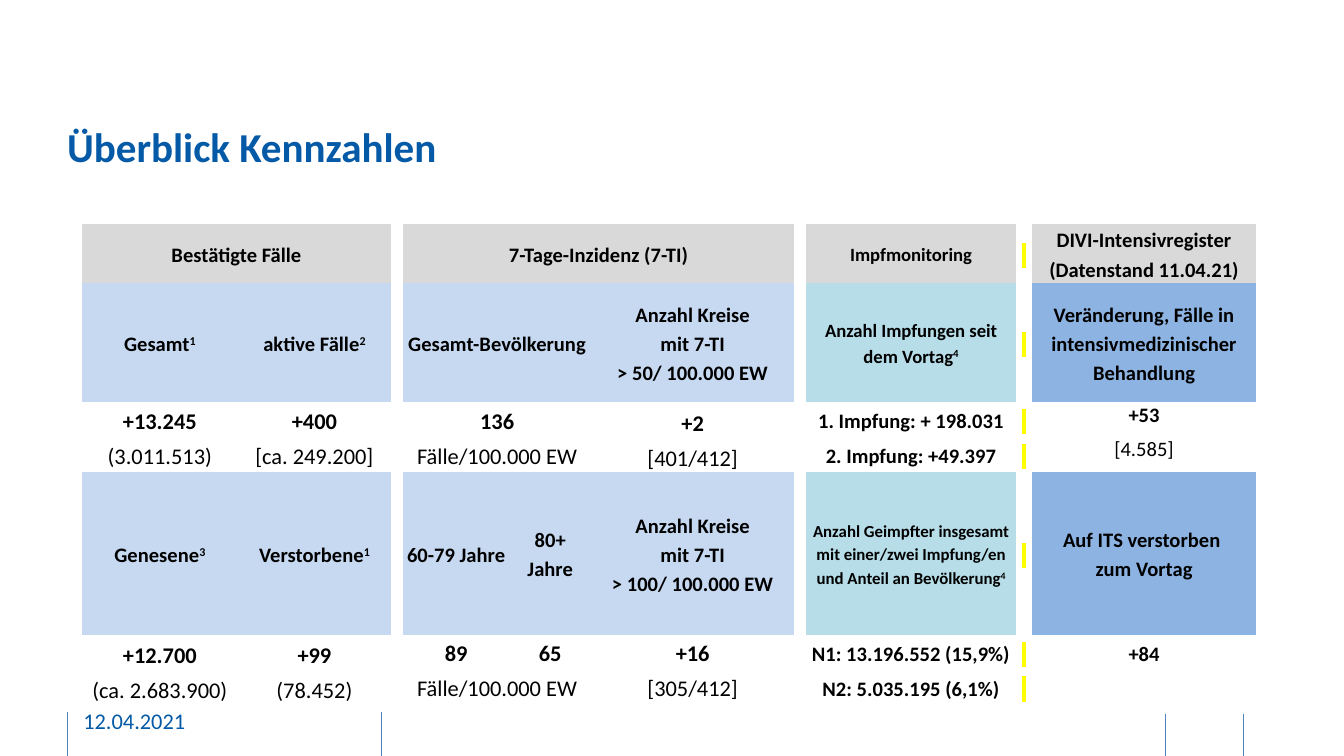
from lxml import etree
from pptx import Presentation, util as u
from pptx.dml.color import RGBColor
from pptx.enum import shapes, text
from pptx.oxml.ns import qn

THEME = {
    "font": "Calibri", "blue": "045AA6", "rule": "4F81BD", "ink": "000000",
    "mark": "FFFF00", "grey": "D9D9D9", "pale": "C6D9F1", "teal": "B6DDE8",
    "deep": "8DB3E2", "title": 22, "value": 12, "head": 11, "small": 10, "tiny": 9,
}
WIDE = 10
TALL = WIDE * 9 / 16
TITLE = "Überblick Kennzahlen"
DATE = "12.04.2021"
RULES = [(0.5, 5.3, 5.63), (2.84, 5.3, 5.64), (8.67, 5.31, 5.65), (9.25, 5.31, 5.65)]
COLS = [1.16, 1.14, 0.09, 0.79, 0.61, 1.51, 0.09, 1.56, 0.12, 1.67]
ROWS = [0.26, 0.89, 0.26, 0.26, 1.21, 0.26, 0.26]
MARK = chr(160)
CELLS = [
    ["Bestätigte Fälle", "", "", "7-Tage-Inzidenz (7-TI)", "", "", "",
     "Impfmonitoring", MARK, "DIVI-Intensivregister\n(Datenstand 11.04.21)"],
    ["Gesamt^1", "aktive Fälle^2", "", "Gesamt-Bevölkerung", "",
     "Anzahl Kreise\nmit 7-TI\n> 50/ 100.000 EW", "",
     "Anzahl Impfungen seit dem Vortag^4", MARK,
     "Veränderung, Fälle in intensivmedizinischer Behandlung"],
    ["+13.245", "+400", "", "136", "", "+2", "", "1. Impfung: + 198.031", MARK, "+53"],
    ["(3.011.513)", "[ca. 249.200]", "", "Fälle/100.000 EW", "", "[401/412]", "",
     "2. Impfung: +49.397", MARK, "[4.585]"],
    ["Genesene^3", "Verstorbene^1", "", "60-79 Jahre", "80+ Jahre",
     "Anzahl Kreise\nmit 7-TI\n> 100/ 100.000 EW", "",
     "Anzahl Geimpfter insgesamt mit einer/zwei Impfung/en und Anteil an Bevölkerung^4",
     MARK, "Auf ITS verstorben \vzum Vortag"],
    ["+12.700", "+99", "", "89", "65", "+16", "", "N1: 13.196.552 (15,9%)", MARK, "+84"],
    ["(ca. 2.683.900)", "(78.452)", "", "Fälle/100.000 EW", "", "[305/412]", "",
     "N2: 5.035.195 (6,1%)", MARK, ""],
]
SPANS = [(0, 0, 0, 1), (0, 3, 0, 5), (1, 3, 1, 4), (2, 3, 2, 4),
         (3, 3, 3, 4), (6, 3, 6, 4), (5, 2, 6, 2)]
HEADS, PLAIN, GAPS = (1, 4), (3, 6), (2, 6, 8)
SIZES = {(0, 7): "small", (1, 7): "small", (4, 7): "tiny"}
LOW = [(2, 5), (3, 5), (5, 0), (5, 1), (6, 0), (6, 1)]
HIGH = [(2, 9), (3, 9)]
PLAIN_GRID = "{2D5ABB26-0587-4C30-8999-92F81FD0307C}"


def color(key):
    return RGBColor.from_string(THEME[key])


def style(run, size, ink, bold=False):
    font = run.font
    font.name, font.size, font.bold = THEME["font"], u.Pt(THEME[size]), bold
    font.color.rgb = color(ink)


def inset(box, side, edge):
    box.margin_left = box.margin_right = u.Inches(side)
    box.margin_top = box.margin_bottom = u.Inches(edge)


def shade(row, col):
    if col in GAPS or row not in (0, *HEADS):
        return None
    if row == 0:
        return "grey"
    return {7: "teal", 9: "deep"}.get(col, "pale")


def highlight(run):
    fill = run.font._element.find(qn("a:solidFill"))
    mark = etree.Element(qn("a:highlight"))
    etree.SubElement(mark, qn("a:srgbClr")).set("val", THEME["mark"])
    fill.addnext(mark)


def fill_cell(cell, row, col, words):
    high = (row, col) in HIGH
    inset(cell, 0.07 if high else 0.02, 0)
    cell.vertical_anchor = (text.MSO_ANCHOR.TOP if high else
                            text.MSO_ANCHOR.BOTTOM if (row, col) in LOW else
                            text.MSO_ANCHOR.MIDDLE)
    tone = shade(row, col)
    if tone:
        cell.fill.solid()
        cell.fill.fore_color.rgb = color(tone)
    else:
        cell.fill.background()
    value = row not in (0, *HEADS) and col < 7
    size = SIZES.get((row, col), "value" if value else "head")
    bold = row not in PLAIN or col == 7
    frame = cell.text_frame
    for n, line in enumerate(words.split("\n")):
        para = frame.paragraphs[0] if n == 0 else frame.add_paragraph()
        base, _, note = line.partition("^")
        para.text = base
        if note:
            run = para.add_run()
            run.text = note
            run.font._element.set("baseline", "30000")
        para.alignment = text.PP_ALIGN.CENTER
        if not high:
            para.line_spacing = 1.15
        if (row, col) == (3, 3):
            para.space_after = u.Pt(3)
        for run in para.runs:
            style(run, size, "ink", bold)
            if col == 8:
                highlight(run)
        if not base:
            end = etree.SubElement(para._p, qn("a:endParaRPr"))
            end.set("sz", str(THEME["head"] * 100))


def add_grid(slide):
    frame = slide.shapes.add_table(len(ROWS), len(COLS), u.Inches(0.61), u.Inches(1.67),
                                   u.Inches(8.73), u.Inches(3.54))
    grid = frame.table
    grid.first_row = grid.horz_banding = False
    grid._tbl.tblPr.find(qn("a:tableStyleId")).text = PLAIN_GRID
    for col, wide in zip(grid.columns, COLS):
        col.width = u.Inches(wide)
    for row, tall in zip(grid.rows, ROWS):
        row.height = u.Inches(tall)
    for top, left, low, right in SPANS:
        grid.cell(top, left).merge(grid.cell(low, right))
    for r, line in enumerate(CELLS):
        for c, words in enumerate(line):
            fill_cell(grid.cell(r, c), r, c, words)
    frame.height = u.Inches(3.54)


def add_rule(slide, x, top, low):
    rule = slide.shapes.add_connector(shapes.MSO_CONNECTOR.STRAIGHT, u.Inches(x),
                                      u.Inches(top), u.Inches(x), u.Inches(low))
    rule.line.color.rgb = color("rule")
    rule.line.width = u.Pt(0.5)
    etree.SubElement(rule._element.spPr, qn("a:effectLst"))


def set_words(shape, words, size, edge, bold=False):
    frame = shape.text_frame
    frame.text = words
    frame.word_wrap = True
    frame.auto_size = text.MSO_AUTO_SIZE.NONE
    frame.vertical_anchor = text.MSO_ANCHOR.MIDDLE
    inset(frame, 0, edge)
    para = frame.paragraphs[0]
    para.alignment = text.PP_ALIGN.LEFT
    style(para.runs[0], size, "blue", bold)


def main():
    deck = Presentation()
    deck.slide_width, deck.slide_height = u.Inches(WIDE), u.Inches(TALL)
    slide = deck.slides.add_slide(deck.slide_layouts[5])
    for rule in RULES:
        add_rule(slide, *rule)
    date = slide.shapes.add_textbox(u.Inches(0.62), u.Inches(5.21),
                                    u.Inches(2.03), u.Inches(0.3))
    set_words(date, DATE, "value", 0.05)
    title = slide.shapes.title
    title.left, title.top = u.Inches(0.5), u.Inches(0.7)
    title.width, title.height = u.Inches(8.73), u.Inches(0.78)
    set_words(title, TITLE, "title", 0, True)
    add_grid(slide)
    deck.save("out.pptx")


if __name__ == "__main__":
    main()
